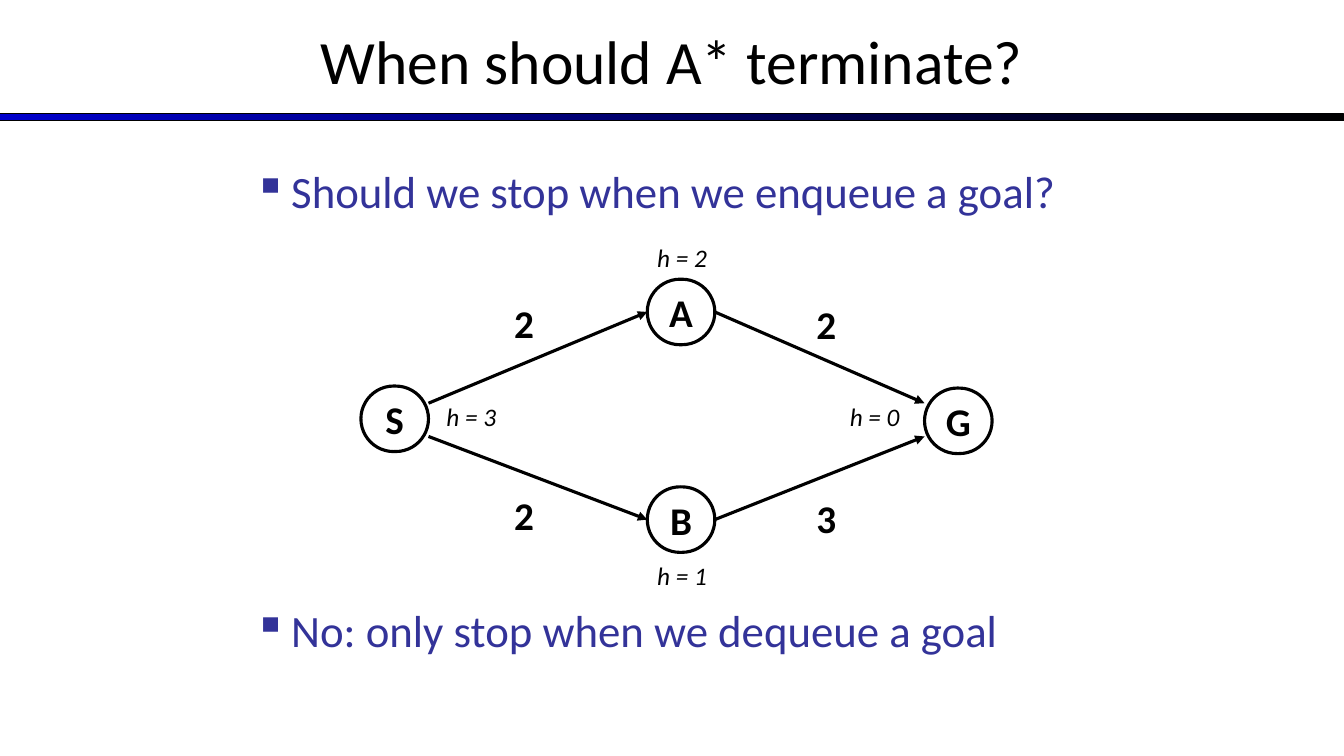
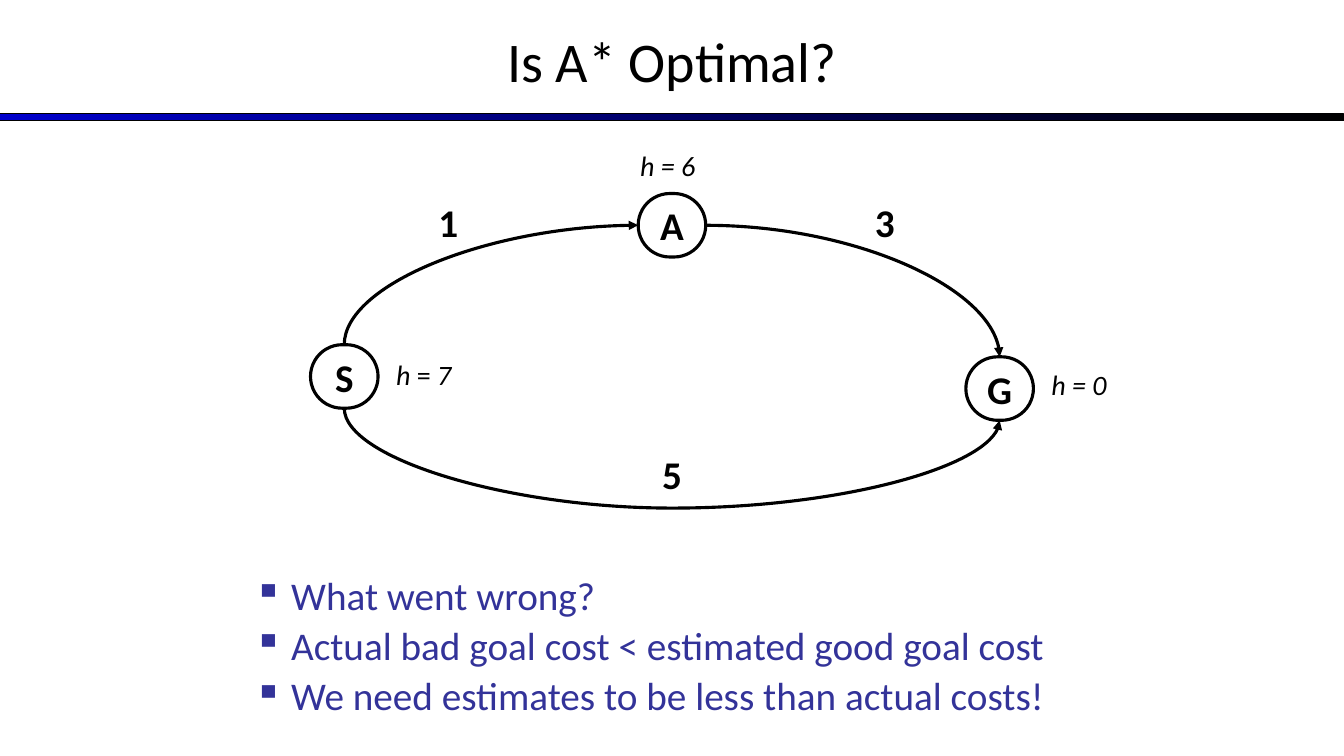
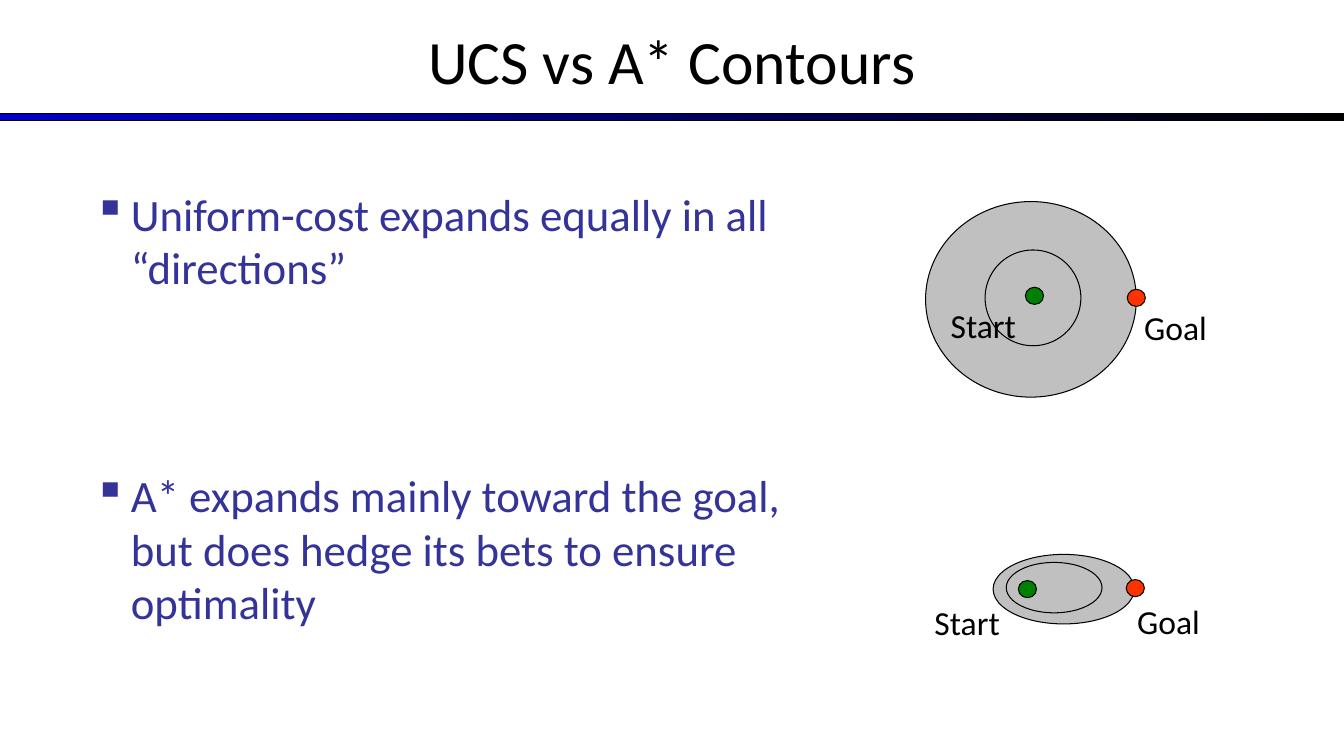
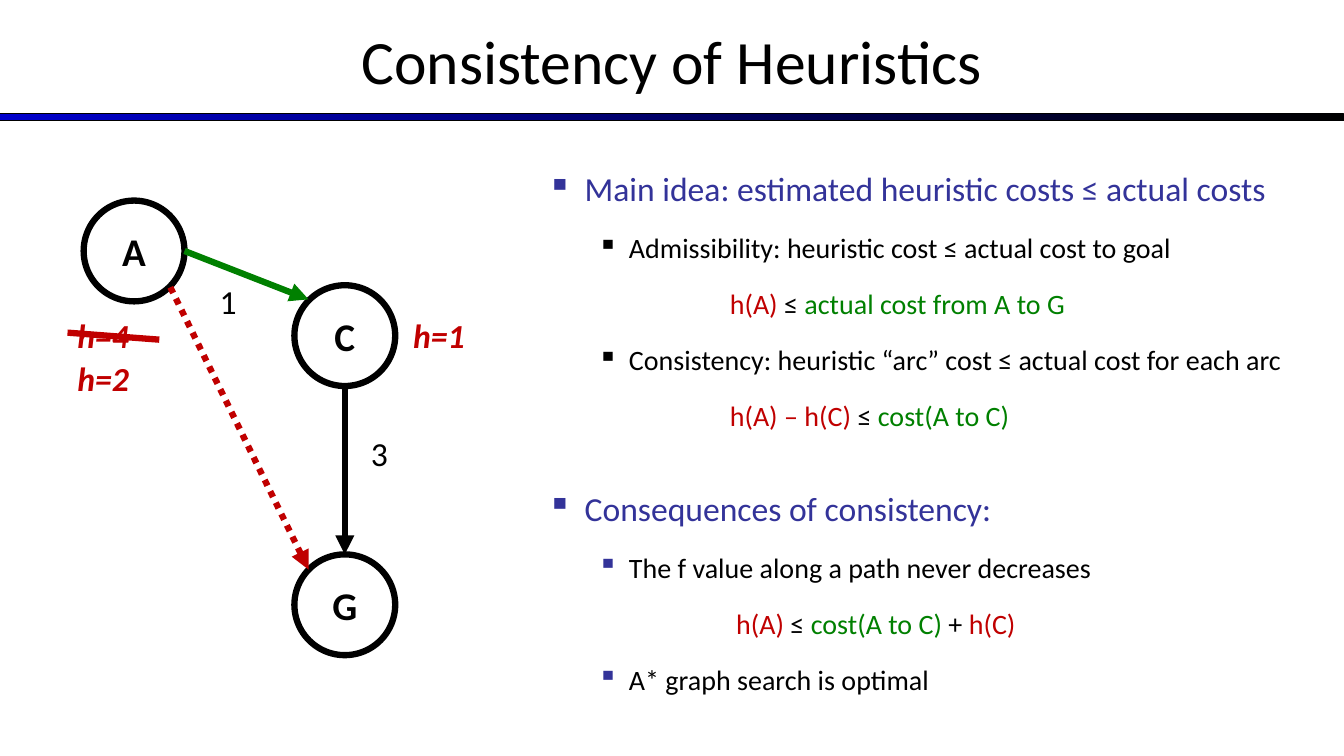
from lxml.etree import SubElement
from pptx import Presentation
from pptx.dml.color import RGBColor
from pptx.enum.dml import MSO_LINE
from pptx.enum.shapes import MSO_CONNECTOR, MSO_SHAPE
from pptx.enum.text import MSO_ANCHOR, PP_ALIGN
from pptx.oxml.ns import qn
from pptx.util import Inches, Pt

HUES = {
    "black": "000000",
    "white": "FFFFFF",
    "band": "0000CC",
    "navy": "333399",
    "red": "C00000",
    "green": "008000",
    "gray": "C0C0C0",
    "goal": "FF3300",
}
FONT = "Calibri"
TOP, LEFT, BOTTOM, RIGHT = range(4)


def hue(name):
    return RGBColor.from_string(HUES[name])


def put(par, text, size=28, color="black", bold=False, italic=False):
    base = dict(size=size, color=color, bold=bold, italic=italic)
    bits = [(text, {})] if isinstance(text, str) else text
    for words, diff in bits:
        look = {**base, **diff}
        run = par.add_run()
        run.text = words
        run.font.name = FONT
        run.font.size = Pt(look["size"])
        run.font.bold = look["bold"]
        run.font.italic = look["italic"]
        run.font.color.rgb = hue(look["color"])


class Deck:
    def __init__(self):
        self.prs = Presentation()
        self.prs.slide_width = Inches(13.33)
        self.prs.slide_height = Inches(7.5)
        self.base = self.prs.slide_layouts[5]
        for spot in list(self.base.placeholders)[1:]:
            self.base.shapes.element.remove(spot.element)
        self.slide = None

    def page(self, title, size=44):
        first = self.slide is None
        self.slide = self.prs.slides.add_slide(self.base)
        if first:
            self.base.shapes.element.append(self.band().element)
        head = self.slide.shapes.title
        head.left, head.top = Inches(0), Inches(-0.03)
        head.width, head.height = Inches(13.33), Inches(1.25)
        head.text_frame.vertical_anchor = MSO_ANCHOR.MIDDLE
        par = head.text_frame.paragraphs[0]
        par.alignment = PP_ALIGN.CENTER
        put(par, title, size=size)

    def shape(self, kind, x, y, w, h, fill=None, line=0.75):
        item = self.slide.shapes.add_shape(
            kind, Inches(x), Inches(y), Inches(w), Inches(h))
        item.shadow.inherit = False
        if fill:
            item.fill.solid()
            item.fill.fore_color.rgb = hue(fill)
        else:
            item.fill.background()
        item.line.color.rgb = hue("black")
        item.line.width = Pt(line)
        return item

    def band(self):
        item = self.shape(MSO_SHAPE.RECTANGLE, 0, 1.13, 13.33, 0.07)
        item.fill.gradient()
        item.fill.gradient_angle = 0
        for stop, name, place in zip(item.fill.gradient_stops, ("band", "black"), (0, 1)):
            stop.color.rgb = hue(name)
            stop.position = place
        return item

    def oval(self, x, y, w, h, fill=None):
        return self.shape(MSO_SHAPE.OVAL, x, y, w, h, fill)

    def letter(self, item, text):
        frame = item.text_frame
        frame.word_wrap = False
        frame.vertical_anchor = MSO_ANCHOR.MIDDLE
        par = frame.paragraphs[0]
        par.alignment = PP_ALIGN.CENTER
        put(par, text, bold=True)
        return item

    def node(self, text, x, y, h):
        item = self.shape(MSO_SHAPE.ROUNDED_RECTANGLE, x, y, 0.67, h, line=2.25)
        item.adjustments[0] = 0.5
        return self.letter(item, text)

    def ring(self, text, x, y):
        item = self.shape(MSO_SHAPE.OVAL, x, y, 1, 1, "white", 4.5)
        return self.letter(item, text)

    def box(self, x, y, w, h):
        frame = self.slide.shapes.add_textbox(
            Inches(x), Inches(y), Inches(w), Inches(h)).text_frame
        frame.word_wrap = True
        return frame

    def label(self, text, x, y, w=1, h=0.5, align=PP_ALIGN.LEFT, **look):
        par = self.box(x, y, w, h).paragraphs[0]
        par.alignment = align
        put(par, text, **look)

    def list(self, x, y, w, h, items, space=None):
        frame = self.box(x, y, w, h)
        for num, (text, left, hang, mark, look) in enumerate(items):
            par = frame.add_paragraph() if num else frame.paragraphs[0]
            if space:
                par.line_spacing = space
            props = par._p.get_or_add_pPr()
            props.set("marL", str(Inches(left)))
            props.set("indent", str(-Inches(hang)))
            gap = SubElement(props, qn("a:spcBef"))
            SubElement(gap, qn("a:spcPct"), val="20000")
            if mark:
                tint = SubElement(props, qn("a:buClr"))
                SubElement(tint, qn("a:srgbClr"), val=HUES[mark])
                SubElement(props, qn("a:buChar"), char="▪")
            put(par, text, **look)

    def link(self, start, end, kind=MSO_CONNECTOR.STRAIGHT, color="black",
             width=2.25, tip="tailEnd", dash=None):
        ends = [(0, 0) if hasattr(spot[0], "shape_id") else spot for spot in (start, end)]
        item = self.slide.shapes.add_connector(
            kind, *[Inches(v) for spot in ends for v in spot])
        for spot, join in ((start, item.begin_connect), (end, item.end_connect)):
            if hasattr(spot[0], "shape_id"):
                join(*spot)
        item.line.color.rgb = hue(color)
        item.line.width = Pt(width)
        if dash:
            item.line.dash_style = dash
        props = item.element.spPr
        if tip:
            SubElement(props.find(qn("a:ln")), qn("a:" + tip), type="triangle")
        SubElement(props, qn("a:effectLst"))
        return item

    def bend(self, start, end, **look):
        item = self.link(start, end, MSO_CONNECTOR.CURVE, **look)
        item.element.spPr.find(qn("a:prstGeom")).set("prst", "curvedConnector2")

    def swing(self, start, end, drop):
        item = self.link((start, BOTTOM), (end, BOTTOM), MSO_CONNECTOR.CURVE)
        wide, tall = item.width, item.height
        mid_x, mid_y = item.left + wide // 2, item.top + tall // 2
        item.left, item.top = mid_x - tall // 2, mid_y - wide // 2
        item.width, item.height = tall, wide
        props = item.element.spPr
        turn = props.find(qn("a:xfrm"))
        turn.set("rot", str(270 * 60000))
        turn.set("flipH", "1")
        geom = props.find(qn("a:prstGeom"))
        rules = geom.find(qn("a:avLst"))
        if rules is None:
            rules = SubElement(geom, qn("a:avLst"))
        ratio = round(Inches(drop) / tall * 100000)
        SubElement(rules, qn("a:gd"), name="adj1", fmla=f"val {ratio}")


def main_point(text, size):
    return text, 0.37, 0.37, "navy", dict(size=size, color="navy")


def sub_point(text, mark):
    return text, 0.81, 0.31, mark, dict(size=20)


def rule(*bits):
    return [(text, dict(color=color)) for text, color in bits], 1.81, 0, None, dict(size=20)


def stop_page(deck):
    deck.page("When should A* terminate?")
    for y, text in ((1.58, "Should we stop when we enqueue a goal?"),
                    (5.93, "No: only stop when we dequeue a goal")):
        deck.list(2.42, y, 10.64, 0.7, [main_point(text, 32)])
    spots = {"S": (3.58, 3.83), "B": (6.42, 4.83), "A": (6.42, 2.77), "G": (9.17, 3.85)}
    nodes = {name: deck.node(name, x, y, 0.65) for name, (x, y) in spots.items()}
    for name, y in (("A", 4), ("B", 4.33)):
        deck.link((4.25, y), (nodes[name], LEFT))
        deck.link((nodes[name], RIGHT), (9.17, y))
    for text, x, y in (("2", 5, 2.92), ("2", 8, 2.93), ("2", 5, 4.83), ("3", 8, 4.85)):
        deck.label(text, x, y, 0.5, 0.57, bold=True)
    for text, x, y in (("h = 1", 6.42, 5.51), ("h = 2", 6.42, 2.35),
                       ("h = 0", 8.33, 3.93), ("h = 3", 4.33, 3.93)):
        deck.label(text, x, y, h=0.4, size=18, italic=True)


def best_page(deck):
    deck.page("Is A* Optimal?", 40)
    lines = ("What went wrong?",
             "Actual bad goal cost < estimated good goal cost",
             "We need estimates to be less than actual costs!")
    deck.list(2.42, 5.67, 10.47, 1.6, [main_point(text, 28) for text in lines], 0.9)
    spots = {"A": (6.33, 1.92), "G": (9.58, 3.54), "S": (3.08, 3.42)}
    nodes = {name: deck.node(name, x, y, 0.63) for name, (x, y) in spots.items()}
    deck.bend((nodes["A"], LEFT), (nodes["S"], TOP), tip="headEnd")
    deck.bend((nodes["A"], RIGHT), (nodes["G"], TOP))
    deck.swing(nodes["S"], nodes["G"], 0.99)
    for text, x in (("1", 4.25), ("3", 8.58)):
        deck.label(text, x, 1.92, 0.5, 0.57, bold=True)
    deck.label("5", 0, 4.42, 13.33, 0.57, PP_ALIGN.CENTER, bold=True)
    seven = [("h", {}), (" = ", dict(italic=False)), ("7", {})]
    for text, x, y in (("h = 6", 6.25, 1.42), ("h = 0", 10.33, 3.6), (seven, 3.83, 3.5)):
        deck.label(text, x, y, h=0.44, size=20, italic=True)


def zone_page(deck):
    deck.page("UCS vs A* Contours")
    for y, h, text in (
            (1.8, 1.3, "Uniform-cost expands equally in all “directions”"),
            (4.59, 1.8, "A* expands mainly toward the goal, but does hedge its bets "
                        "to ensure optimality")):
        deck.list(0.83, y, 7.33, h, [main_point(text, 32)])
    zones = (
        ((9.18, 2, 2.09, 1.94), (9.77, 2.48, 0.95, 0.95),
         (10.17, 2.85), (11.18, 2.87), (9.33, 2.98), (11.25, 3)),
        ((9.85, 5.5, 1.4, 0.69), (9.98, 5.58, 0.95, 0.5),
         (10.1, 5.76), (11.17, 5.75), (9.17, 5.92), (11.18, 5.91)),
    )
    for outer, inner, start, goal, start_tag, goal_tag in zones:
        deck.oval(*outer, fill="gray")
        deck.oval(*inner)
        deck.oval(*start, 0.18, 0.17, fill="green")
        deck.oval(*goal, 0.18, 0.17, fill="goal")
        deck.label("Start", *start_tag, size=24)
        deck.label("Goal", *goal_tag, size=24)


def cost_page(deck):
    deck.page("Consistency of Heuristics")
    deck.list(5.33, 1.42, 7.58, 3, [
        main_point("Main idea: estimated heuristic costs ≤ actual costs", 24),
        sub_point("Admissibility: heuristic cost ≤ actual cost to goal", "black"),
        rule(("h(A) ", "red"), ("≤ ", "black"), ("actual cost from A to G", "green")),
        sub_point("Consistency: heuristic “arc” cost ≤ actual cost for each arc", "black"),
        rule(("h(A) – h(C) ", "red"), ("≤ ", "black"), ("cost(A to C)", "green")),
    ], 1.5)
    deck.list(5.33, 4.59, 7.58, 2.5, [
        main_point("Consequences of consistency:", 24),
        sub_point("The f value along a path never decreases", "navy"),
        rule((" h(A) ", "red"), ("≤ ", "black"), ("cost(A to C) ", "green"),
             ("+ ", "black"), ("h(C)", "red")),
        sub_point("A* graph search is optimal", "navy"),
    ], 1.5)
    deck.link((3.42, 3.83), (3.42, 5.5), width=4.5)
    for name, x, y in (("A", 0.83, 1.99), ("C", 2.92, 2.83), ("G", 2.92, 5.5)):
        deck.ring(name, x, y)
    for text, x, y in (("3", 3.58, 4.25), ("1", 2.08, 2.74)):
        deck.label(text, x, y, 0.5, size=24)
    for text, x, y in (("h=4", 0.67, 3.08), ("h=1", 4, 3.08), ("h=2", 0.67, 3.5)):
        deck.label(text, x, y, 0.8, size=24, color="red", bold=True, italic=True)
    deck.link((1.69, 2.85), (3.06, 5.65), color="red", width=4.5, dash=MSO_LINE.ROUND_DOT)
    deck.link((1.83, 2.49), (3.06, 2.97), color="green", width=4.5)
    deck.link((0.67, 3.3), (1.58, 3.37), color="red", width=4.5, tip=None)


def main():
    deck = Deck()
    for draw in (stop_page, best_page, zone_page, cost_page):
        draw(deck)
    deck.prs.save("out.pptx")


if __name__ == "__main__":
    main()
